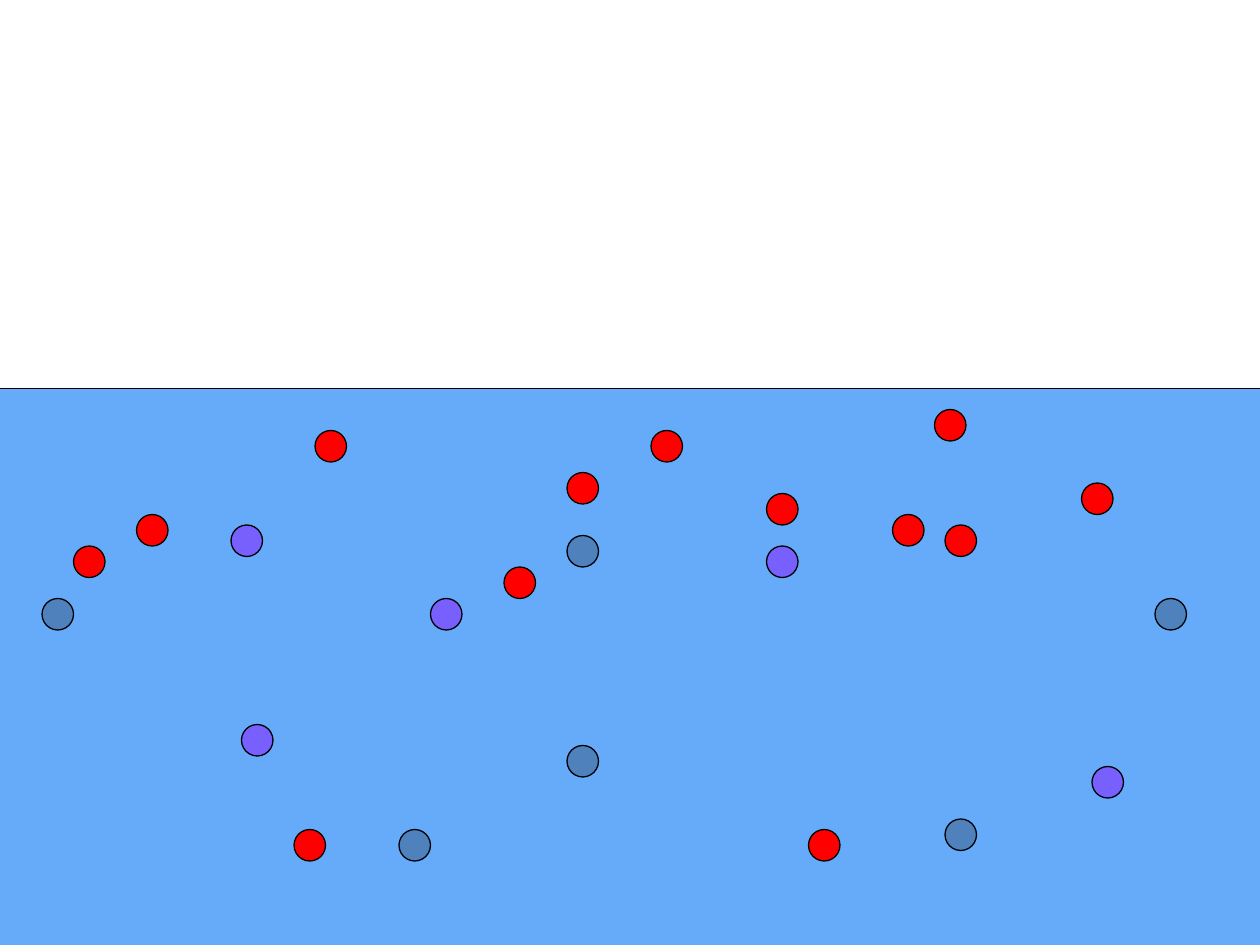
from pptx import Presentation
from pptx.util import Cm, Pt
from pptx.dml.color import RGBColor
from pptx.enum.shapes import MSO_SHAPE

UNIT = 2.54 / 12  # grid step in cm: a twelfth of an inch


def rgb(value):
    return RGBColor.from_string(value)


def add_outlined(kind, x, y, w, h, color):
    sp = s.shapes.add_shape(kind, *(Cm(n * UNIT) for n in (x, y, w, h)))
    sp.shadow.inherit = False
    sp.fill.solid()
    sp.fill.fore_color.rgb = rgb(color)
    sp.line.color.rgb = rgb("000000")
    sp.line.width = Pt(0.75)


prs = Presentation()
prs.slide_width, prs.slide_height = Cm(25.4), Cm(19.05)
s = prs.slides.add_slide(prs.slide_layouts[6])

# Water, running past the slide edges
add_outlined(MSO_SHAPE.RECTANGLE, -4, 37, 128, 58, "65ABF9")

# Particles by colour: left and top in grid steps
particles = {
    "4F81BD": [(38, 79), (54, 51), (90, 78), (54, 71), (4, 57), (110, 57)],
    "7760FE": [(22, 50), (73, 52), (41, 57), (23, 69), (104, 73)],
    "FF0000": [(48, 54), (90, 50), (77, 79), (28, 79), (13, 49), (30, 41),
               (62, 41), (89, 39), (7, 52), (54, 45), (73, 47), (85, 49),
               (103, 46)],
}
for color, places in particles.items():
    for x, y in places:
        add_outlined(MSO_SHAPE.OVAL, x, y, 3, 3, color)

prs.save("out.pptx")
